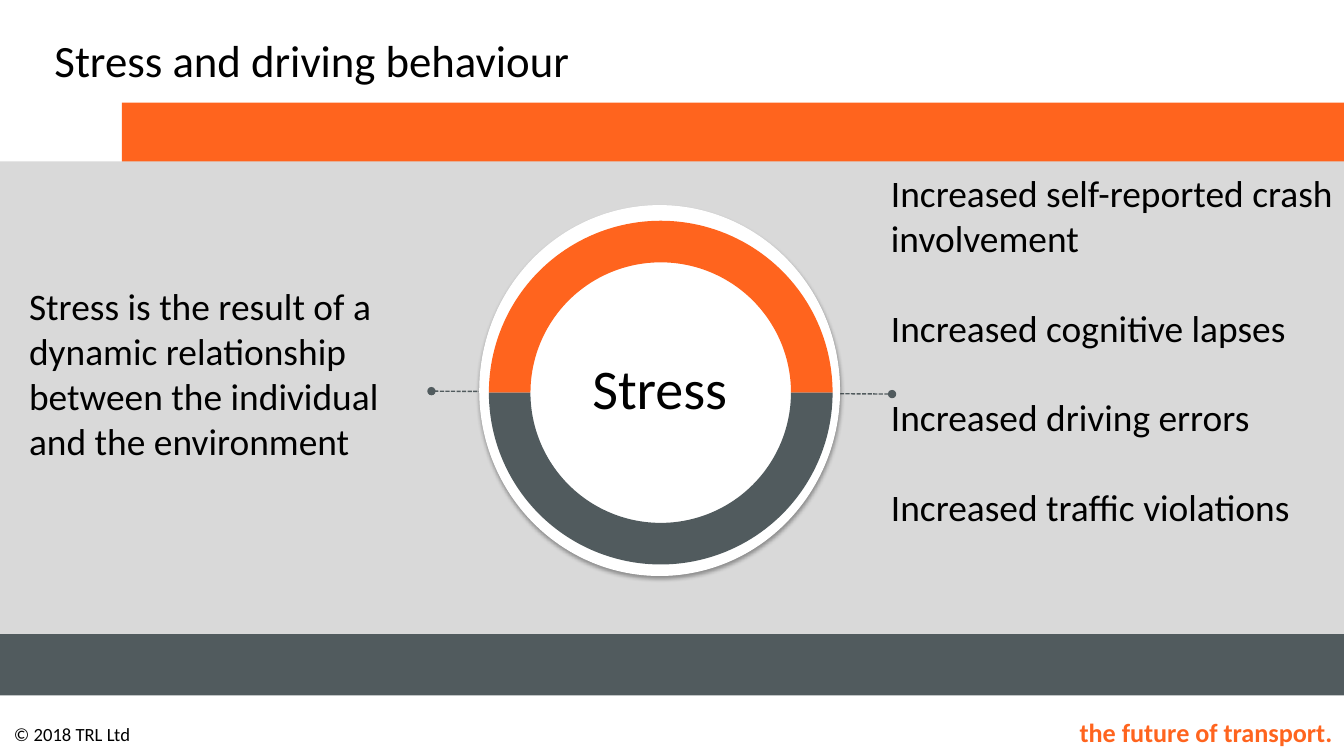
from dataclasses import dataclass

from lxml.etree import SubElement
from pptx import Presentation
from pptx.dml.color import RGBColor
from pptx.enum.dml import MSO_LINE
from pptx.enum.shapes import MSO_CONNECTOR, MSO_SHAPE
from pptx.enum.text import MSO_ANCHOR, PP_ALIGN
from pptx.oxml.ns import qn
from pptx.util import Pt

TITLE = "Stress and driving behaviour"
CENTRE = "Stress"
DEFINITION = ["Stress is the result of a dynamic relationship between "
              "the individual and the environment"]
EFFECTS = [
    "Increased self-reported crash involvement",
    "Increased cognitive lapses",
    "Increased driving errors",
    "Increased traffic violations",
]
COPYRIGHT = "© 2018 TRL Ltd"
SLOGAN = "the future of transport."


@dataclass(frozen=True)
class Theme:
    font: str = "Calibri"
    text: RGBColor = RGBColor(0, 0, 0)
    white: RGBColor = RGBColor(255, 255, 255)
    orange: RGBColor = RGBColor(0xFF, 0x64, 0x1E)
    slate: RGBColor = RGBColor(0x51, 0x5B, 0x5E)
    panel: RGBColor = RGBColor(0xD9, 0xD9, 0xD9)
    centre_size: float = 40
    title_size: float = 32
    body_size: float = 26.7
    slogan_size: float = 18.7
    copyright_size: float = 13.3


THEME = Theme()
WIDTH, HEIGHT = 960, 540

# Left, top, width, height in points
BANDS = [
    ((87.1, 73.4, WIDTH - 87.1, 43.2), THEME.orange),
    ((0, 115.2, WIDTH, 380.9), THEME.panel),
    ((0, 452.9, WIDTH, 43.9), THEME.slate),
]
DISC = (342.7, 146.9, 257, 264.2)
RING = (349.2, 157.7, 245.5, 245.5)
RING_THICKNESS = 0.121
HALF_TURN = 108
RING_HALVES = [(HALF_TURN, 0, THEME.orange), (0, HALF_TURN, THEME.slate)]
POINTER = (637.2, 281.5, 308.2, 279.4)


def points(values):
    return [Pt(value) for value in values]


def add_filled(slide, preset, box, color):
    shape = slide.shapes.add_shape(preset, *points(box))
    shape.shadow.inherit = False
    shape.fill.solid()
    shape.fill.fore_color.rgb = color
    shape.line.fill.background()
    return shape


def write(frame, lines, size, color=THEME.text, align=PP_ALIGN.LEFT,
          bold=False, gap=0):
    for index, line in enumerate(lines):
        paragraph = frame.paragraphs[0] if index == 0 else frame.add_paragraph()
        paragraph.alignment = align
        if index:
            paragraph.space_before = Pt(gap)
        run = paragraph.add_run()
        run.text = line
        run.font.name = THEME.font
        run.font.size = Pt(size)
        run.font.bold = bold
        run.font.color.rgb = color


def add_text(slide, box, lines, size, anchor=MSO_ANCHOR.TOP, **style):
    frame = slide.shapes.add_textbox(*points(box)).text_frame
    frame.word_wrap = True
    frame.vertical_anchor = anchor
    write(frame, lines, size, **style)


def add_soft_shadow(shape):
    effects = shape._element.spPr.find(qn("a:effectLst"))
    shadow = SubElement(effects, qn("a:outerShdw"), blurRad=str(Pt(3.1)),
                        dist=str(Pt(1.8)), dir="5400000", rotWithShape="0")
    color = SubElement(shadow, qn("a:srgbClr"), val=str(THEME.text))
    SubElement(color, qn("a:alpha"), val="35000")


def add_pointer(slide):
    """Dashed line with a dot at each end, running behind the disc."""
    pointer = slide.shapes.add_connector(MSO_CONNECTOR.STRAIGHT, *points(POINTER))
    pointer.line.color.rgb = THEME.slate
    pointer.line.width = Pt(1)
    pointer.line.dash_style = MSO_LINE.SQUARE_DOT
    outline = pointer.line._get_or_add_ln()
    for end in ("a:headEnd", "a:tailEnd"):
        SubElement(outline, qn(end), type="oval")
    SubElement(pointer._element.spPr, qn("a:effectLst"))


def add_ring(slide):
    disc = add_filled(slide, MSO_SHAPE.OVAL, DISC, THEME.white)
    disc.line.color.rgb = THEME.white
    disc.line.width = Pt(0.75)
    add_soft_shadow(disc)
    for start, end, color in RING_HALVES:
        half = add_filled(slide, MSO_SHAPE.BLOCK_ARC, RING, color)
        for index, value in enumerate((start, end, RING_THICKNESS)):
            half.adjustments[index] = value


def add_title(slide):
    title = slide.shapes.title
    title.left, title.top, title.width, title.height = points((31.7, 10.1, 718.6, 64.8))
    title.text_frame.vertical_anchor = MSO_ANCHOR.MIDDLE
    write(title.text_frame, [TITLE], THEME.title_size)


def main():
    presentation = Presentation()
    presentation.slide_width, presentation.slide_height = points((WIDTH, HEIGHT))
    slide = presentation.slides.add_slide(presentation.slide_layouts[5])
    add_title(slide)
    for box, color in BANDS:
        add_filled(slide, MSO_SHAPE.RECTANGLE, box, color)
    add_pointer(slide)
    add_ring(slide)
    add_text(slide, (410.4, 249.1, 121.7, 55.4), [CENTRE], THEME.centre_size,
             align=PP_ALIGN.CENTER)
    add_text(slide, (13.7, 198.7, 280.8, 136.8), DEFINITION, THEME.body_size)
    add_text(slide, (629.3, 118.1, 331.2, 298.1), EFFECTS, THEME.body_size, gap=32)
    add_text(slide, (2.9, 512.6, 157, 23.8), [COPYRIGHT], THEME.copyright_size,
             anchor=MSO_ANCHOR.MIDDLE)
    add_text(slide, (750.2, 508.3, 208.8, 30.2), [SLOGAN], THEME.slogan_size,
             color=THEME.orange, align=PP_ALIGN.RIGHT, bold=True)
    presentation.save("out.pptx")


if __name__ == "__main__":
    main()
